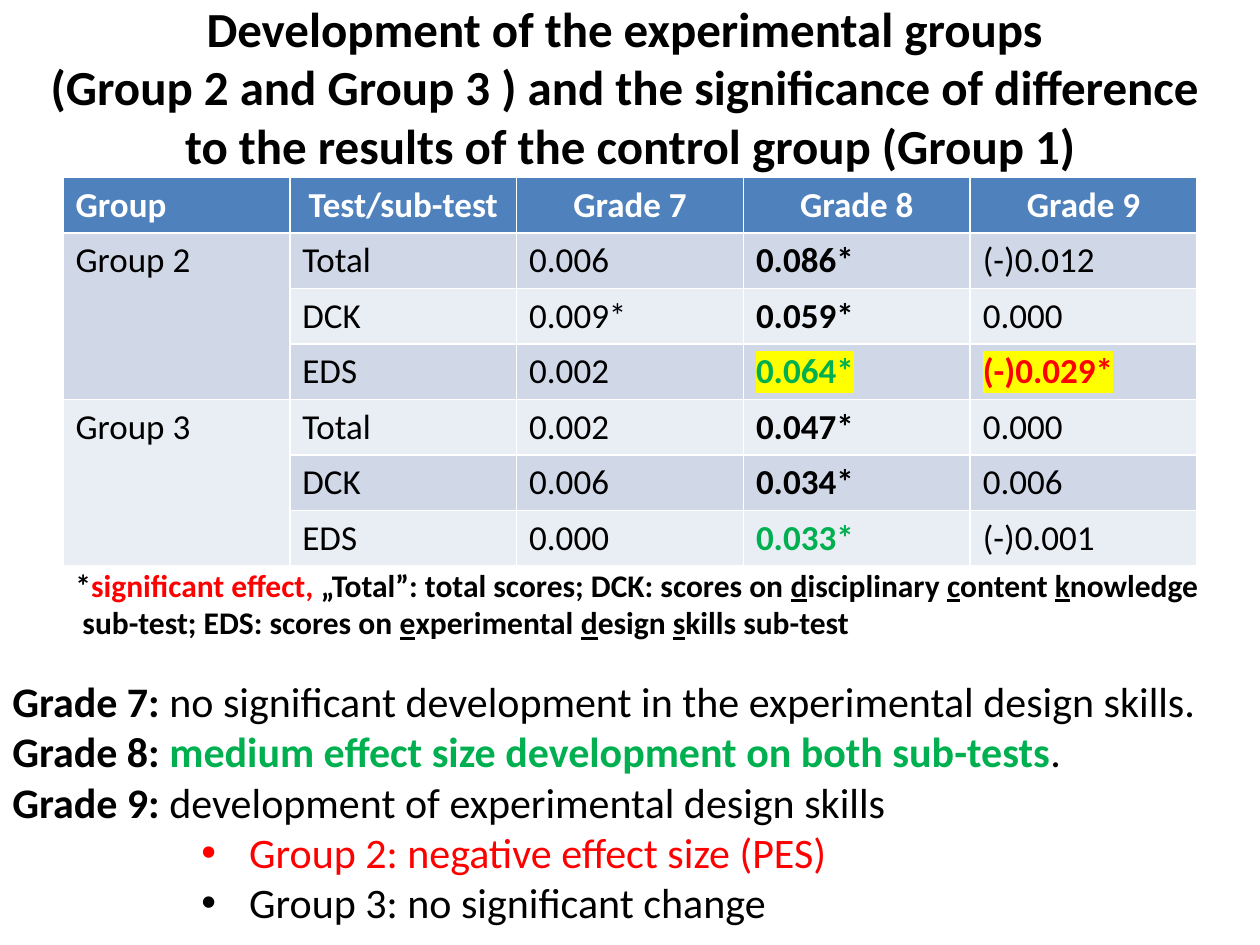
from lxml import etree
from pptx import Presentation
from pptx import util as u
from pptx.dml.color import RGBColor
from pptx.enum import text
from pptx.oxml import ns

Inches = u.Inches
FONT = "Calibri"
COLORS = {
    "black": "000000",
    "white": "FFFFFF",
    "red": "FF0000",
    "green": "00B050",
    "yellow": "FFFF00",
    "header": "4F81BD",
    "dark_band": "D0D8E8",
    "light_band": "E9EDF4",
}
TITLE = (
    "Development of the experimental groups \n"
    "(Group 2 and Group 3 ) and the significance of difference \n"
    "to the results of the control group (Group 1)"
)
HEADERS = ["Group", "Test/sub-test", "Grade 7", "Grade 8", "Grade 9"]
GROUPS = {
    "Group 2": [
        ("Total", "0.006", "0.086*", "(-)0.012"),
        ("DCK", "0.009*", "0.059*", "0.000"),
        ("EDS", "0.002", "0.064*", "(-)0.029*"),
    ],
    "Group 3": [
        ("Total", "0.002", "0.047*", "0.000"),
        ("DCK", "0.006", "0.034*", "0.006"),
        ("EDS", "0.000", "0.033*", "(-)0.001"),
    ],
}
BOLD = {"bold": True}
UNDERLINED = {"bold": True, "underline": True}
RED = {"color": "red"}
GREEN = {"bold": True, "color": "green"}
EMPHASIS = {
    "0.064*": {**GREEN, "highlight": "yellow"},
    "0.033*": GREEN,
    "(-)0.029*": {"bold": True, "color": "red", "highlight": "yellow"},
}
LEGEND = [
    [
        ("*", BOLD), ("significant effect, ", {"bold": True, "color": "red"}),
        ("„Total”: total scores; DCK: scores on ", BOLD),
        ("d", UNDERLINED), ("isciplinary ", BOLD),
        ("c", UNDERLINED), ("ontent ", BOLD),
        ("k", UNDERLINED), ("nowledge", BOLD),
    ],
    [
        (" sub-test; EDS: scores on ", BOLD),
        ("e", UNDERLINED), ("xperimental ", BOLD),
        ("d", UNDERLINED), ("esign ", BOLD),
        ("s", UNDERLINED), ("kills sub-test", BOLD),
    ],
]
FINDINGS = [
    [("Grade 7: ", BOLD),
     ("no significant development in the experimental design skills.", {})],
    [("Grade 8: ", BOLD),
     ("medium effect size development on both sub-tests", GREEN), (".", {})],
    [("Grade 9: ", BOLD), ("development of experimental design skills", {})],
]
GROUP_FINDINGS = [
    [("Group 2: negative effect size (PES)", RED)],
    [("Group 3: no significant change", {})],
]


def rgb(name):
    """Return the named colour."""
    return RGBColor.from_string(COLORS[name])


def format_run(run, size, bold=False, underline=None, color="black", highlight=None):
    """Apply font, size, colour and emphasis to a run."""
    font = run.font
    font.name, font.size, font.bold = FONT, u.Pt(size), bold
    font.underline = underline
    font.color.rgb = rgb(color)
    if highlight:
        marker = etree.Element(ns.qn("a:highlight"))
        etree.SubElement(marker, ns.qn("a:srgbClr"), val=COLORS[highlight])
        font.fill._xPr.find(ns.qn("a:solidFill")).addnext(marker)


def write_paragraphs(frame, paragraphs, size):
    """Write lists of styled runs as paragraphs and return them."""
    written = []
    for index, runs in enumerate(paragraphs):
        paragraph = frame.add_paragraph() if index else frame.paragraphs[0]
        for words, style in runs:
            run = paragraph.add_run()
            run.text = words
            format_run(run, size, **style)
        written.append(paragraph)
    return written


def add_bullet(paragraph):
    """Turn a paragraph into an indented bullet."""
    paragraph.level = 3
    properties = paragraph._p.get_or_add_pPr()
    properties.set("marL", str(Inches(1.88)))
    properties.set("indent", str(Inches(-0.38)))
    etree.SubElement(properties, ns.qn("a:buFont"), typeface="Arial")
    etree.SubElement(properties, ns.qn("a:buChar"), char="•")


def place_title(slide, left, top, width, height):
    """Fill and move the title placeholder."""
    title = slide.shapes.title
    title.left, title.top, title.width, title.height = left, top, width, height
    frame = title.text_frame
    frame.auto_size = text.MSO_AUTO_SIZE.NONE
    frame.vertical_anchor = text.MSO_ANCHOR.MIDDLE
    frame.margin_bottom = Inches(0.52)
    paragraph = frame.paragraphs[0]
    paragraph.text = TITLE
    paragraph.alignment = text.PP_ALIGN.CENTER
    for run in paragraph.runs:
        format_run(run, 28, bold=True)


def fill_cell(cell, words, fill, style, centered=False):
    """Write one table cell with its background."""
    cell.fill.solid()
    cell.fill.fore_color.rgb = rgb(fill)
    paragraph = write_paragraphs(cell.text_frame, [[(words, style)]], 20)[0]
    if centered:
        paragraph.alignment = text.PP_ALIGN.CENTER


def place_results(slide, left, top, width, height):
    """Add the table of effect sizes by group and grade."""
    row_count = 1 + sum(len(rows) for rows in GROUPS.values())
    table = slide.shapes.add_table(
        row_count, len(HEADERS), left, top, width, height).table
    for column, header in enumerate(HEADERS):
        fill_cell(table.cell(0, column), header, "header",
                  {"bold": True, "color": "white"}, centered=column > 0)
    row = 1
    for group, results in GROUPS.items():
        first_row = row
        for values in results:
            band = "dark_band" if row % 2 else "light_band"
            label = group if row == first_row else ""
            for column, value in enumerate((label, *values)):
                style = EMPHASIS.get(value, {"bold": HEADERS[column] == "Grade 8"})
                if value:
                    fill_cell(table.cell(row, column), value, band, style)
            row += 1
        table.cell(first_row, 0).merge(table.cell(row - 1, 0))


def place_legend(slide, left, top, width, height):
    """Add the explanation below the table."""
    frame = slide.shapes.add_textbox(left, top, width, height).text_frame
    frame.word_wrap = False
    frame.auto_size = text.MSO_AUTO_SIZE.SHAPE_TO_FIT_TEXT
    write_paragraphs(frame, LEGEND, 18)


def place_findings(slide, left, top, width, height):
    """Add the findings by grade, ending in bullets by group."""
    frame = slide.shapes.add_textbox(left, top, width, height).text_frame
    frame.word_wrap = True
    frame.auto_size = text.MSO_AUTO_SIZE.SHAPE_TO_FIT_TEXT
    paragraphs = write_paragraphs(frame, FINDINGS + GROUP_FINDINGS, 24)
    for paragraph in paragraphs[len(FINDINGS):]:
        add_bullet(paragraph)


def main():
    """Build and save the presentation."""
    presentation = Presentation()
    presentation.slide_width, presentation.slide_height = Inches(10), Inches(7.5)
    slide = presentation.slides.add_slide(presentation.slide_layouts[5])
    place_title(slide, Inches(0), Inches(0.11), Inches(10), Inches(1.62))
    place_results(slide, Inches(0.5), Inches(1.41), Inches(9), Inches(3.03))
    place_legend(slide, Inches(0.5), Inches(4.44), Inches(9.19), Inches(0.71))
    place_findings(slide, Inches(0), Inches(5.31), Inches(10), Inches(2.12))
    presentation.save("out.pptx")


if __name__ == "__main__":
    main()
